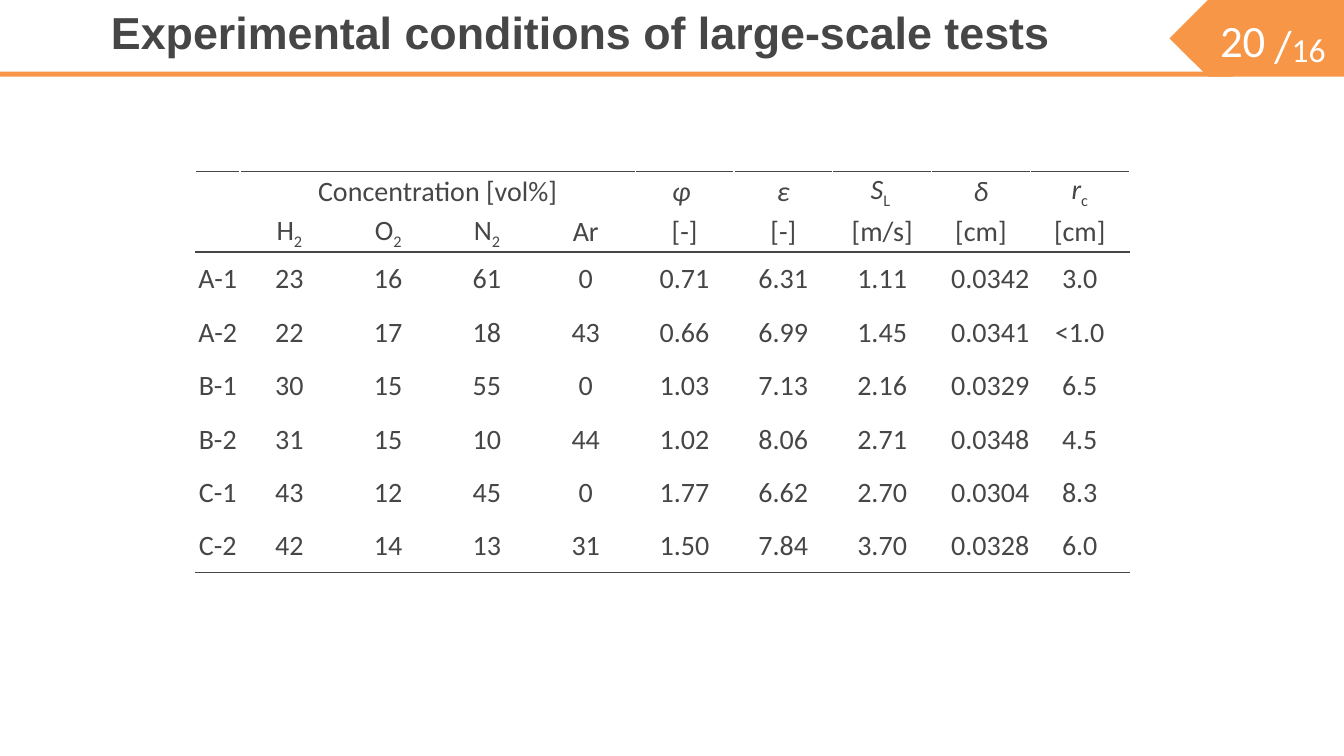
from pptx import Presentation
from pptx.dml.color import RGBColor
from pptx.enum.shapes import MSO_SHAPE as Shape
from pptx.enum.text import MSO_ANCHOR as Anchor, PP_ALIGN as Align
from pptx.oxml.ns import qn
from pptx.util import Inches, Pt
from lxml.etree import SubElement

ORANGE, DARK, WHITE = "F79646", "464646", "FFFFFF"

SYMBOLS = ["", "Concentration [vol%]", "", "", "", "φ ", "ε", "S_L ", "δ", "r_c"]
UNITS = ["", "H_2", "O_2", "N_2", "Ar", "[-]", "[-]", "[m/s]", "[cm]", "[cm]"]
TESTS = [
    ["A-1", "23", "16", "61", "0", "0.71", "6.31", "1.11", "0.0342", "3.0"],
    ["A-2", "22", "17", "18", "43", "0.66", "6.99", "1.45", "0.0341", "<1.0"],
    ["B-1", "30", "15", "55", "0", "1.03", "7.13", "2.16", "0.0329", "6.5"],
    ["B-2", "31", "15", "10", "44", "1.02", "8.06", "2.71", "0.0348", "4.5"],
    ["C-1", "43", "12", "45", "0", "1.77", "6.62", "2.70", "0.0304", "8.3"],
    ["C-2", "42", "14", "13", "31", "1.50", "7.84", "3.70", "0.0328", "6.0"],
]
THICKNESS_COLUMN = 8


def color(value):
    return RGBColor.from_string(value)


def add_span(para, text, size=20, font="Calibri", fill=DARK, bold=False,
             italic=False, baseline=None):
    span = para.add_run()
    span.text = text
    span.font.size = Pt(size)
    span.font.name = font
    span.font.bold = bold
    span.font.italic = italic
    span.font.color.rgb = color(fill)
    if baseline:
        span.font._element.set("baseline", str(baseline * 1000))


class SlideBuilder:
    def __init__(self, deck):
        self.page = deck.slides.add_slide(deck.slide_layouts[5])

    def place(self, left, top, width, height):
        return [Inches(length) for length in (left, top, width, height)]

    def title(self, text, *at):
        box = self.page.shapes.title
        box.left, box.top, box.width, box.height = self.place(*at)
        box.text_frame.vertical_anchor = Anchor.MIDDLE
        para = box.text_frame.paragraphs[0]
        para.alignment = Align.LEFT
        add_span(para, text, size=32, font="Arial", bold=True)

    def shape(self, kind, *at, flip=False):
        shape = self.page.shapes.add_shape(kind, *self.place(*at))
        shape.shadow.inherit = False
        shape.fill.solid()
        shape.fill.fore_color.rgb = color(ORANGE)
        shape.line.fill.background()
        if flip:
            shape._element.spPr.find(qn("a:xfrm")).set("flipH", "1")

    def text(self, spans, *at, align=Align.LEFT, wrap=True):
        box = self.page.shapes.add_textbox(*self.place(*at))
        box.text_frame.word_wrap = wrap
        para = box.text_frame.paragraphs[0]
        para.alignment = align
        for text, size in spans:
            add_span(para, text, size=size, fill=WHITE)

    def border(self, cell, side, line_color):
        line = SubElement(cell._tc.get_or_add_tcPr(), qn(f"a:ln{side}"), w="12700")
        fill = SubElement(line, qn("a:solidFill"))
        SubElement(fill, qn("a:srgbClr"), val=line_color)

    def cell(self, cell, text, ruled_sides, align, italic):
        for side in "LRTB":
            self.border(cell, side, DARK if side in ruled_sides else WHITE)
        cell.fill.background()
        if not text:
            return
        cell.vertical_anchor = Anchor.MIDDLE
        cell.margin_left = cell.margin_right = cell.margin_top = Inches(0.01)
        cell.margin_bottom = 0
        para = cell.text_frame.paragraphs[0]
        para.alignment = align
        # An underscore starts a subscript
        base, _, subscript = text.partition("_")
        add_span(para, base, italic=italic)
        if subscript:
            add_span(para, subscript, baseline=-25)

    def table(self, rows, widths, heights, *at):
        frame = self.page.shapes.add_table(len(rows), len(widths), *self.place(*at))
        table = frame.table
        table.first_row = table.horz_banding = False
        for column, width in zip(table.columns, widths):
            column.width = Inches(width)
        for row, height in zip(table.rows, heights):
            row.height = Inches(height)
        ruled = {0: "T", 1: "B", 2: "T", len(rows) - 1: "B"}
        for i, row in enumerate(rows):
            for j, text in enumerate(row):
                right = i > 1 and j == THICKNESS_COLUMN
                self.cell(table.cell(i, j), text, ruled.get(i, ""),
                          Align.RIGHT if right else Align.CENTER,
                          italic=i == 0 and j > 4)
        table.cell(0, 1).merge(table.cell(0, 4))


def main():
    deck = Presentation()
    deck.slide_width, deck.slide_height = Inches(13.33), Inches(7.5)
    slide = SlideBuilder(deck)

    # Header band and page number
    slide.shape(Shape.PENTAGON, 11.6, 0, 1.74, 0.76, flip=True)
    slide.shape(Shape.RECTANGLE, 0, 0.71, 12.23, 0.05)
    slide.text([("20", 32)], 11.6, 0.08, 1.05, 0.46, align=Align.RIGHT)
    slide.text([("/", 32), ("16", 24)], 12.54, 0.13, 0.72, 0.64, wrap=False)
    slide.title("Experimental conditions of large-scale tests", 1, 0, 10.6, 0.63)

    # Test conditions
    slide.table([SYMBOLS, UNITS] + TESTS, [0.44] + [0.98] * 9,
                [0.33] * 2 + [0.53] * 6, 1.94, 1.7, 9.3, 3.88)

    deck.save("out.pptx")


if __name__ == "__main__":
    main()
